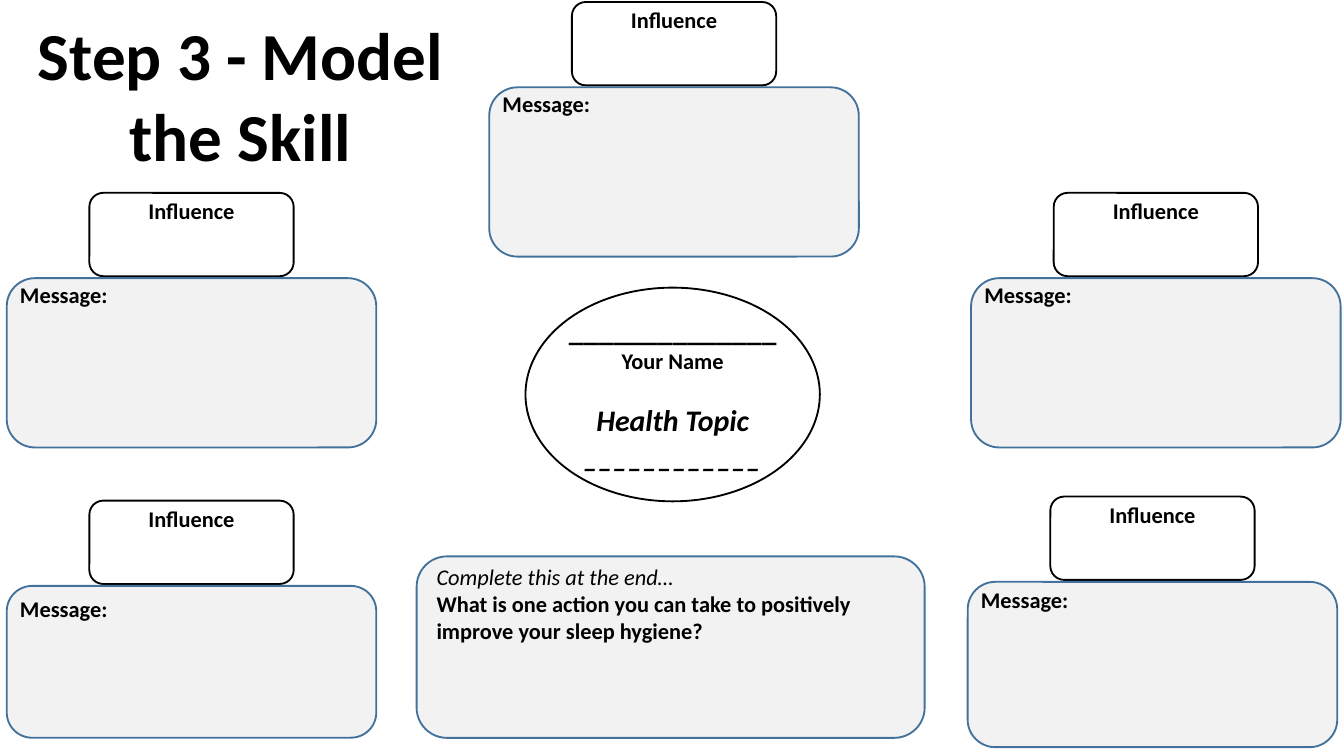
from dataclasses import dataclass

from pptx import Presentation
from pptx.dml.color import RGBColor
from pptx.enum.shapes import MSO_SHAPE
from pptx.enum.text import MSO_ANCHOR, MSO_AUTO_SIZE, PP_ALIGN
from pptx.util import Inches, Pt

ROUND, OVAL = MSO_SHAPE.ROUNDED_RECTANGLE, MSO_SHAPE.OVAL
TOP, MIDDLE = MSO_ANCHOR.TOP, MSO_ANCHOR.MIDDLE
LEFT, CENTER = PP_ALIGN.LEFT, PP_ALIGN.CENTER
NO_FIT = MSO_AUTO_SIZE.NONE
TITLE_ONLY = 5

# Grid of square cells, ten to the inch
CELL = Inches(0.1)
COLS, ROWS = 100, 56.25


@dataclass(frozen=True)
class Theme:
    font: str = "Calibri"
    ink: RGBColor = RGBColor(0x00, 0x00, 0x00)
    paper: RGBColor = RGBColor(0xFF, 0xFF, 0xFF)
    panel: RGBColor = RGBColor(0xF2, 0xF2, 0xF2)
    edge: RGBColor = RGBColor(0x42, 0x71, 0x9B)
    title: int = 36
    large: int = 16
    body: int = 12
    outline: int = 1


THEME = Theme()
BOLD = {"bold": True}
ITALIC = {"italic": True}

# Influence cards: column, row and height of the message panel, row shift of its text
CARDS = [
    (36.4, 6.5, 12.6, -0.25),
    (0.5, 20.7, 12.6, -0.25),
    (72.25, 20.7, 12.6, -0.25),
    (0.5, 43.6, 11.3, 0.2),
    (72, 43.3, 12.3, -0.2),
]
PANEL_W = 27.5
LABEL_W, LABEL_H = 15.2, 6.2
LABEL_DX, LABEL_DY = 6.15, -6.35
CAPTION_H = 2.3


def cells(*lengths):
    return [round(n * CELL) for n in lengths]


def add_outline(s, kind, box, line, fill=None):
    sp = s.shapes.add_shape(kind, *cells(*box))
    sp.shadow.inherit = False
    sp.line.color.rgb = line
    sp.line.width = Pt(THEME.outline)
    if fill is None:
        sp.fill.background()
    else:
        sp.fill.solid()
        sp.fill.fore_color.rgb = fill


def format_frame(tf, anchor=TOP, **margins):
    frame = {"word_wrap": True, "auto_size": NO_FIT, "vertical_anchor": anchor}
    for name, value in {**frame, **margins}.items():
        setattr(tf, name, value)


def add_run(p, text, size, style):
    r = p.add_run()
    r.text = text
    values = {"name": THEME.font, "size": Pt(size), **style}
    for name, value in values.items():
        setattr(r.font, name, value)
    r.font.color.rgb = THEME.ink


def add_text(s, box, lines, align=LEFT):
    """Each line is (text, size, style, points of space before)."""
    tf = s.shapes.add_textbox(*cells(*box)).text_frame
    format_frame(tf)
    for i, (text, size, style, gap) in enumerate(lines):
        p = tf.add_paragraph() if i else tf.paragraphs[0]
        p.alignment = align
        p.space_before = Pt(gap)
        add_run(p, text, size, style)


def add_title(s, text, box):
    sp = s.shapes.title
    sp.left, sp.top, sp.width, sp.height = cells(*box)
    inset = CELL
    format_frame(sp.text_frame, MIDDLE, margin_left=inset, margin_right=inset,
                 margin_top=inset, margin_bottom=inset)
    p = sp.text_frame.paragraphs[0]
    p.alignment = CENTER
    add_run(p, text, THEME.title, BOLD)


def add_card(s, col, row, height, text_shift):
    label_col, label_row = col + LABEL_DX, row + LABEL_DY
    add_outline(s, ROUND, (label_col, label_row, LABEL_W, LABEL_H),
                THEME.ink, THEME.paper)
    add_outline(s, ROUND, (col, row, PANEL_W, height), THEME.edge, THEME.panel)
    add_text(s, (col, row + text_shift, LABEL_W, CAPTION_H),
             [("Message:", THEME.body, BOLD, 0)])
    add_text(s, (label_col, label_row - 0.15, LABEL_W, CAPTION_H),
             [("Influence", THEME.body, BOLD, 0)], CENTER)


def add_centre(s):
    topic = {**BOLD, **ITALIC}
    add_outline(s, OVAL, (39.1, 21.4, 21.9, 15.9), THEME.ink)
    add_text(s, (39.1, 22.7, 21.9, 13.3), [
        ("______________", THEME.large, BOLD, 0),
        ("Your Name", THEME.body, BOLD, 0),
        ("Health Topic", THEME.large, topic, 14.5),
        ("____________", THEME.large, topic, 0),
    ], CENTER)


def add_reflection(s):
    add_outline(s, ROUND, (31, 41.4, 37.8, 13.5), THEME.edge, THEME.panel)
    add_text(s, (31.5, 41.4, 37.4, 7.7), [
        ("Complete this at the end…", THEME.body, ITALIC, 0),
        ("What is one action you can take to positively improve your "
         "sleep hygiene?", THEME.body, BOLD, 0),
    ])


def main():
    prs = Presentation()
    prs.slide_width, prs.slide_height = cells(COLS, ROWS)
    s = prs.slides.add_slide(prs.slide_layouts[TITLE_ONLY])

    # Name and topic in the middle
    add_centre(s)

    # Influences around it
    for card in CARDS:
        add_card(s, *card)

    # Closing question and heading
    add_reflection(s)
    add_title(s, "Step 3 - Model the Skill", (0.5, 2.1, 34.8, 9.8))

    prs.save("out.pptx")


if __name__ == "__main__":
    main()
